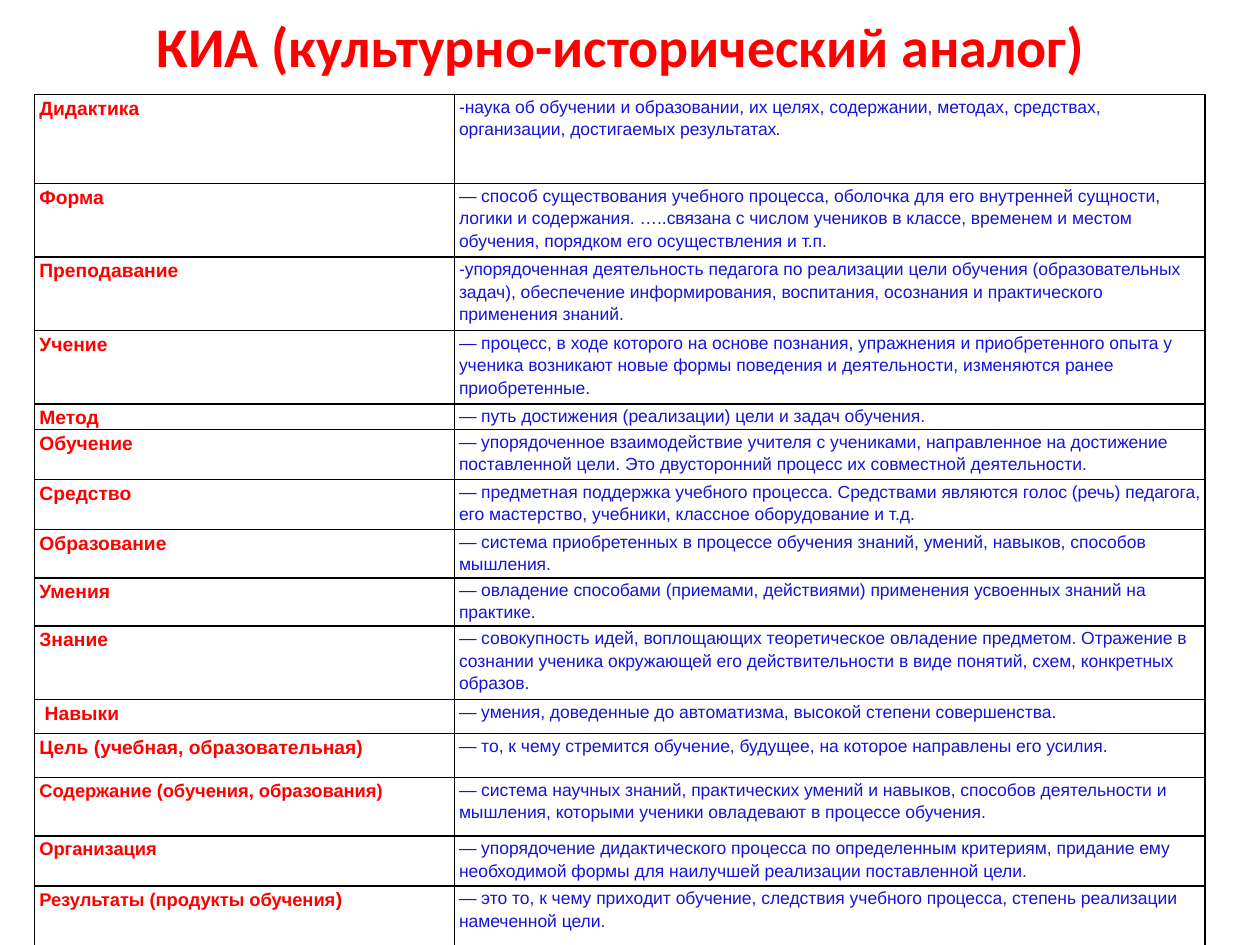
from dataclasses import dataclass

from lxml import etree
from pptx import Presentation
from pptx.dml.color import RGBColor
from pptx.enum import text
from pptx.oxml import ns
from pptx.util import Pt


@dataclass(frozen=True)
class Theme:
    red: str = "FF0000"
    blue: str = "1414DA"
    line: str = "000000"
    head: float = 32
    term: float = 11
    small: float = 10.5
    body: float = 10
    sans: str = "Arial"
    title: str = "Calibri"


look = Theme()


def add_run(para, words, size, color, face=look.sans, bold=False, slant=False):
    run = para.add_run()
    run.text = words
    font = run.font
    font.name, font.size = face, Pt(size)
    font.bold, font.italic = bold, slant
    font.color.rgb = RGBColor.from_string(color)


def add_edges(cell):
    props = cell._tc.get_or_add_tcPr()
    for side in ("lnL", "lnR", "lnT", "lnB"):
        edge = etree.SubElement(props, ns.qn(f"a:{side}"), w=str(Pt(1)))
        fill = etree.SubElement(edge, ns.qn("a:solidFill"))
        etree.SubElement(fill, ns.qn("a:srgbClr"), val=look.line)


rows = [
    (51, 0, [("Дидактика", look.term)],
     "-наука об обучении и образовании, их целях, содержании, методах, средствах, организации, достигаемых результатах"),
    (42, 3.8, [("Форма", look.term)],
     "— способ существования учебного процесса, оболочка для его внутренней сущности, логики и содержания. "
     "…..связана с числом учеников в классе, временем и местом обучения, порядком его осуществления и т.п."),
    (42, 0, [("Преподавание", look.term)],
     "-упорядоченная деятельность педагога по реализации цели обучения (образовательных задач), "
     "обеспечение информирования, воспитания, осознания и практического применения знаний."),
    (42, 3.8, [("Учение", look.term)],
     "— процесс, в ходе которого на основе познания, упражнения и приобретенного опыта у ученика "
     "возникают новые формы поведения и деятельности, изменяются ранее приобретенные."),
    (14.5, 3.8, [("Метод", look.term)],
     "— путь достижения (реализации) цели и задач обучения."),
    (28.6, 0, [("Обучение", look.term)],
     "— упорядоченное взаимодействие учителя с учениками, направленное на достижение поставленной цели. "
     "Это двусторонний процесс их совместной деятельности."),
    (28.6, 3.8, [("Средство", look.term)],
     "— предметная поддержка учебного процесса. Средствами являются голос (речь) педагога, "
     "его мастерство, учебники, классное оборудование и т.д."),
    (27.6, 3.8, [("Образование", look.term)],
     "— система приобретенных в процессе обучения знаний, умений, навыков, способов мышления."),
    (27.6, 3.8, [("Умения", look.term)],
     "— овладение способами (приемами, действиями) применения усвоенных знаний на практике."),
    (42, 3.8, [("Знание", look.term)],
     "— совокупность идей, воплощающих теоретическое овладение предметом. Отражение в сознании ученика "
     "окружающей его действительности в виде понятий, схем, конкретных образов."),
    (19.4, 0.2, [(" Навыки", look.term)],
     "— умения, доведенные до автоматизма, высокой степени совершенства."),
    (25.2, 0.2, [("Цель (учебная, образовательная)", look.term)],
     "— то, к чему стремится обучение, будущее, на которое направлены его усилия."),
    (33.4, 0, [("Содержание (обучения, образования)", look.small)],
     "— система научных знаний, практических умений и навыков, способов деятельности и мышления, "
     "которыми ученики овладевают в процессе обучения."),
    (28.6, 0, [("Организация", look.small)],
     "— упорядочение дидактического процесса по определенным критериям, придание ему необходимой формы "
     "для наилучшей реализации поставленной цели."),
    (35.3, 3.8, [("Результаты (продукты обучения", look.small), (")", look.term)],
     "— это то, к чему приходит обучение, следствия учебного процесса, степень реализации намеченной цели."),
]
cols = (239.8, 429.1)

deck = Presentation()
deck.slide_width, deck.slide_height = Pt(720), Pt(540)
slide = deck.slides.add_slide(deck.slide_layouts[5])

title = slide.shapes.title
title.left, title.top, title.width, title.height = Pt(31), Pt(-13.7), Pt(648), Pt(79.2)
frame = title.text_frame
frame.word_wrap = True
frame.auto_size = text.MSO_AUTO_SIZE.NONE
frame.vertical_anchor = text.MSO_ANCHOR.MIDDLE
para = frame.paragraphs[0]
para.alignment = text.PP_ALIGN.CENTER
add_run(para, "КИА (культурно-исторический аналог)", look.head, look.red, look.title, bold=True)

high = sum(row[0] for row in rows)
table = slide.shapes.add_table(len(rows), len(cols), Pt(19.8), Pt(54), Pt(sum(cols)), Pt(high)).table
table.first_row = table.horz_banding = False
for col, wide in zip(table.columns, cols):
    col.width = Pt(wide)

for line, (tall, gap, terms, words) in zip(table.rows, rows):
    line.height = Pt(tall)
    for cell in line.cells:
        cell.margin_left = cell.margin_right = Pt(2.7)
        cell.margin_top = cell.margin_bottom = 0
        add_edges(cell)
        cell.fill.background()
        cell.text_frame.paragraphs[0].line_spacing = 1.15
    left, right = (cell.text_frame.paragraphs[0] for cell in line.cells)
    for term, size in terms:
        add_run(left, term, size, look.red, bold=True)
    if gap:
        right.space_before = Pt(gap)
    add_run(right, words, look.body, look.blue)

first = table.cell(0, 1).text_frame.paragraphs[0]
add_run(first, ".", look.body, look.blue, slant=True)

deck.save("out.pptx")
